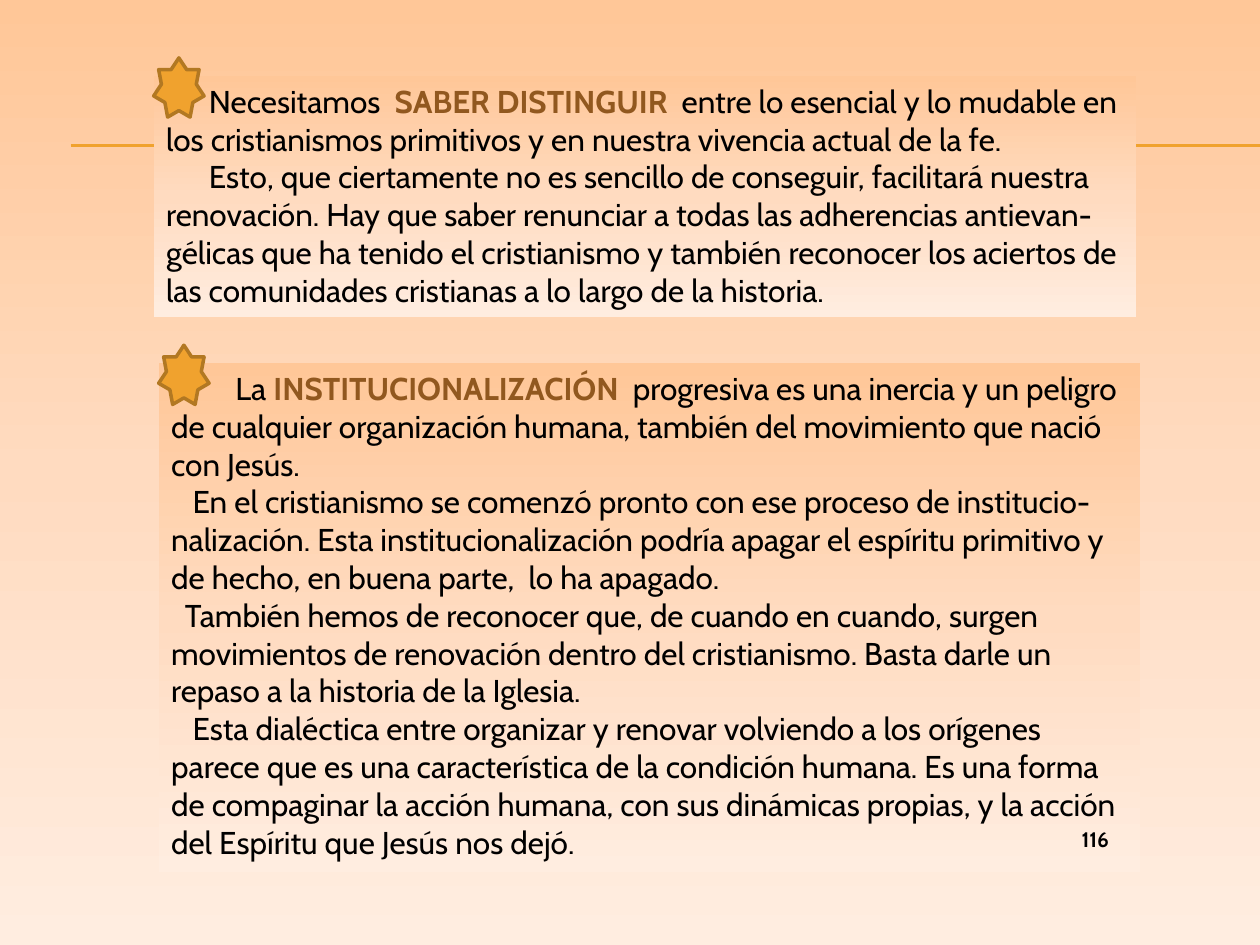
from copy import deepcopy

from pptx import Presentation
from pptx.dml.color import RGBColor
from pptx.enum.shapes import MSO_CONNECTOR as Connector, MSO_SHAPE as Shape
from pptx.enum.text import MSO_ANCHOR as Anchor, MSO_AUTO_SIZE as AutoSize, PP_ALIGN as Align
from pptx.oxml.ns import qn
from pptx.util import Inches, Pt
from lxml.etree import SubElement

FONT = "Cabin"
BLACK = RGBColor(0x00, 0x00, 0x00)
BROWN = RGBColor(0x91, 0x58, 0x1F)
GOLD = RGBColor(0xF0, 0xA2, 0x2E)
DARK_GOLD = RGBColor(0xB2, 0x78, 0x22)
PEACH = [RGBColor(0xFF, 0xC7, 0x98), RGBColor(0xFF, 0xDB, 0xC0), RGBColor(0xFF, 0xED, 0xE0)]

# Each panel: position, then paragraphs as (first-line indent, [(text, emphasised)]).
PANELS = [
    ((1.22, 0.6, 7.8, 1.92), [
        (0.34, [("Necesitamos  ", False), ("SABER DISTINGUIR  ", True),
                ("entre lo esencial y lo mudable en los cristianismos primitivos y en "
                 "nuestra vivencia actual de la fe.", False)]),
        (0.34, [("Esto, que ciertamente no es sencillo de conseguir, facilitará nuestra "
                 "renovación. Hay que saber renunciar a todas las adherencias "
                 "antievan-gélicas que ha tenido el cristianismo y también reconocer los "
                 "aciertos de las comunidades cristianas a lo largo de la historia.", False)]),
    ]),
    ((1.26, 2.88, 7.79, 4.04), [
        (0.51, [("La ", False), ("INSTITUCIONALIZACIÓN", True),
                ("  progresiva es una inercia y un peligro de cualquier organización "
                 "humana, también del movimiento que nació con Jesús.", False)]),
        (0.17, [("En el cristianismo se comenzó pronto con ese proceso de "
                 "institucio-nalización. Esta institucionalización podría apagar el "
                 "espíritu primitivo y de hecho, en buena parte,  lo ha apagado.", False)]),
        (0.11, [("También hemos de reconocer que, de cuando en cuando, surgen movimientos "
                 "de renovación dentro del cristianismo. Basta darle un repaso a la "
                 "historia de la Iglesia.", False)]),
        (0.17, [("Esta dialéctica entre organizar y renovar volviendo a los orígenes parece "
                 "que es una característica de la condición humana. Es una forma de "
                 "compaginar la acción humana, con sus dinámicas propias, y la acción del "
                 "Espíritu que Jesús nos dejó.", False)]),
    ]),
]
PAGE_NUMBER = "116"
RULE_HEIGHTS = (1.15, 1.16)
STAR_SIZE = (0.4, 0.47)
STAR_RISE = 0.14


def fill_peach(fill):
    """Apply the three-stop gradient, darkest at the top."""
    fill.gradient()
    fill.gradient_angle = 270
    first = fill.gradient_stops[0]._gs
    first.addnext(deepcopy(first))
    for index, (stop, color) in enumerate(zip(fill.gradient_stops, PEACH)):
        stop.color.rgb = color
        stop.position = index / 2


def style(span, size, color, bold):
    span.font.name = FONT
    span.font.size = Pt(size)
    span.font.color.rgb = color
    span.font.bold = bold


def add_rule(page, y):
    rule = page.shapes.add_connector(
        Connector.STRAIGHT, Inches(0.56), Inches(y), Inches(10), Inches(y))
    rule.line.color.rgb = GOLD
    rule.line.width = Pt(0.75)
    SubElement(rule._element.spPr, qn("a:effectLst"))


def add_panel(page, place, paragraphs):
    panel = page.shapes.add_shape(Shape.RECTANGLE, *map(Inches, place))
    panel.shadow.inherit = False
    fill_peach(panel.fill)
    panel.line.fill.background()
    frame = panel.text_frame
    frame.word_wrap = True
    frame.auto_size = AutoSize.SHAPE_TO_FIT_TEXT
    frame.vertical_anchor = Anchor.TOP
    for index, (indent, spans) in enumerate(paragraphs):
        para = frame.add_paragraph() if index else frame.paragraphs[0]
        para.alignment = Align.LEFT
        para._p.get_or_add_pPr().set("indent", str(Inches(indent)))
        for text, emphasised in spans:
            span = para.add_run()
            span.text = text
            style(span, 18, BROWN if emphasised else BLACK, emphasised)


def add_star(page, left, top):
    star = page.shapes.add_shape(
        Shape.STAR_7_POINT, Inches(left), Inches(top), *map(Inches, STAR_SIZE))
    star.shadow.inherit = False
    star.fill.solid()
    star.fill.fore_color.rgb = GOLD
    star.line.color.rgb = DARK_GOLD
    star.line.width = Pt(2)


def add_page_number(page):
    box = page.shapes.add_textbox(Inches(8.07), Inches(6.51), Inches(0.83), Inches(0.27))
    box.text_frame.word_wrap = True
    para = box.text_frame.paragraphs[0]
    para.text = PAGE_NUMBER
    para.alignment = Align.RIGHT
    style(para.runs[0], 12, BLACK, True)


def main():
    deck = Presentation()
    deck.slide_width, deck.slide_height = Inches(10), Inches(7.5)
    page = deck.slides.add_slide(deck.slide_layouts[6])
    fill_peach(page.background.fill)
    for y in RULE_HEIGHTS:
        add_rule(page, y)
    for place, paragraphs in PANELS:
        add_panel(page, place, paragraphs)
        add_star(page, place[0], place[1] - STAR_RISE)
    add_page_number(page)
    deck.save("out.pptx")


if __name__ == "__main__":
    main()
